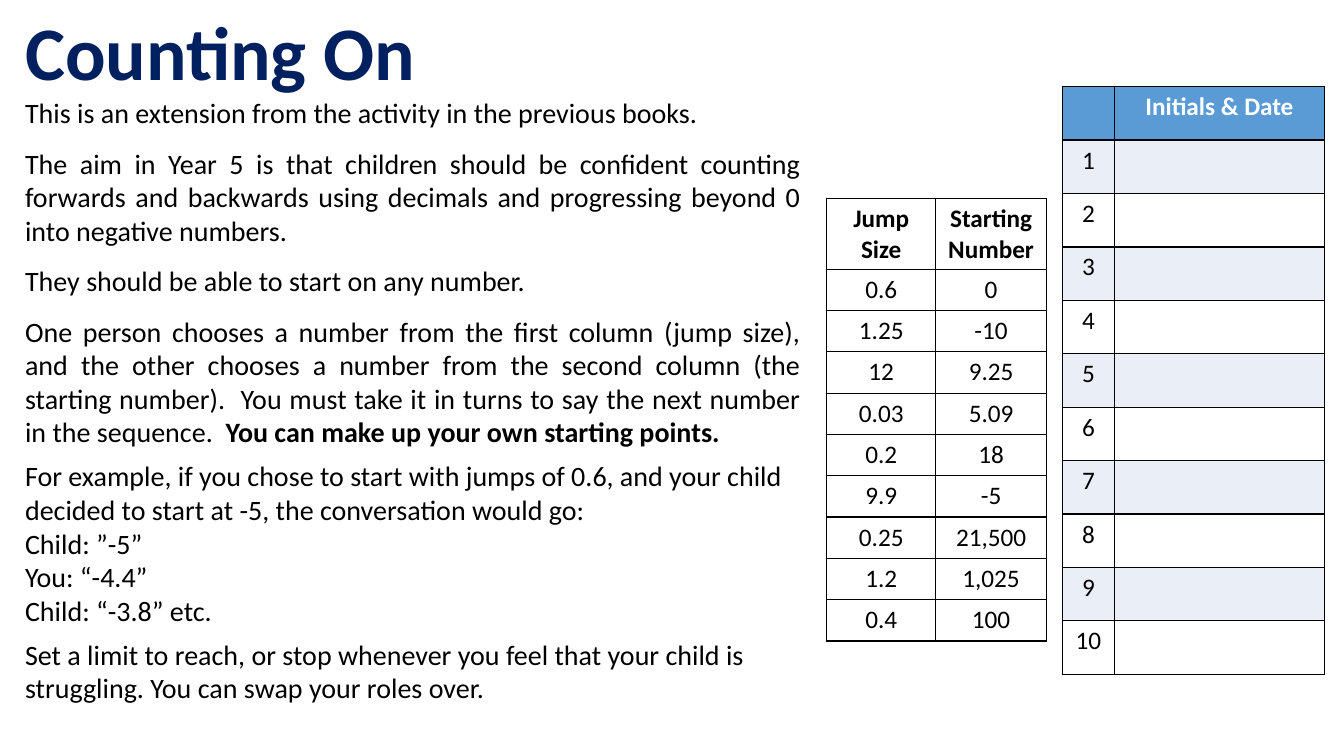
from lxml.etree import SubElement
from pptx import Presentation
from pptx.dml.color import RGBColor
from pptx.enum.text import PP_ALIGN
from pptx.oxml.ns import qn
from pptx.util import Inches, Pt

COLORS = {
    "navy": "002060",
    "black": "000000",
    "white": "FFFFFF",
    "blue": "5B9BD5",
    "pale": "EAEFF7",
}
LEFT, JUST, MID = PP_ALIGN.LEFT, PP_ALIGN.JUSTIFY, PP_ALIGN.CENTER


class Page:
    font = "Calibri"

    def __init__(self, slide):
        self.slide = slide

    def color(self, name):
        return RGBColor.from_string(COLORS[name])

    def run(self, para, text, size, color="black", bold=False):
        run = para.add_run()
        run.text = text
        run.font.name = self.font
        run.font.size = Pt(size)
        run.font.bold = bold
        run.font.color.rgb = self.color(color)

    def text(self, box, paras, size, color="black"):
        frame = self.slide.shapes.add_textbox(*map(Inches, box)).text_frame
        frame.word_wrap = True
        for i, (align, gap, runs) in enumerate(paras):
            para = frame.add_paragraph() if i else frame.paragraphs[0]
            para.alignment = align
            if gap:
                para.space_before = Pt(gap)
            for words, bold in runs:
                self.run(para, words, size, color, bold)

    def border(self, cell):
        props = cell._tc.get_or_add_tcPr()
        for i, side in enumerate(("lnL", "lnR", "lnT", "lnB")):
            line = SubElement(props, qn("a:" + side), w=str(Pt(1)))
            fill = SubElement(line, qn("a:solidFill"))
            SubElement(fill, qn("a:srgbClr"), val=COLORS["black"])
            props.insert(i, line)

    def table(self, left, top, cols, head, row, data, ink, fills):
        size = sum(cols), head + row * (len(data) - 1)
        table = self.slide.shapes.add_table(
            len(data), len(cols), *map(Inches, (left, top, *size))).table
        table.horz_banding = False
        for col, width in zip(table.columns, cols):
            col.width = Inches(width)
        for r, values in enumerate(data):
            table.rows[r].height = Inches(row if r else head)
            for c, value in enumerate(values):
                cell = table.cell(r, c)
                cell.fill.solid()
                tone = fills[1 + (r - 1) % 2] if r else fills[0]
                cell.fill.fore_color.rgb = self.color(tone)
                self.border(cell)
                para = cell.text_frame.paragraphs[0]
                para.alignment = MID
                if value:
                    self.run(para, value, 18, "black" if r else ink, r == 0)


def main():
    deck = Presentation()
    deck.slide_width, deck.slide_height = Inches(13.33), Inches(7.5)
    page = Page(deck.slides.add_slide(deck.slide_layouts[6]))

    page.text((0.15, 0, 6.34, 1.01),
              [(LEFT, 0, [("Counting On", True)])], 54, "navy")
    page.text((0.15, 0.9, 7.89, 6.19), [
        (JUST, 0, [("This is an extension from the activity in the previous "
                    "books.", False)]),
        (JUST, 12, [("The aim in Year 5 is that children should be confident "
                     "counting forwards and backwards using decimals and "
                     "progressing beyond 0 into negative numbers.", False)]),
        (JUST, 12, [("They should be able to start on any number.", False)]),
        (JUST, 12, [("One person chooses a number from the first column (jump "
                     "size), and the other chooses a number from the second "
                     "column (the starting number).  You must take it in turns "
                     "to say the next number in the sequence.  ", False),
                    ("You can make up your own starting points.", True)]),
        (LEFT, 7.3, [("For example, if you chose to start with jumps of 0.6, "
                      "and your child decided to start at -5, the conversation "
                      "would go:", False)]),
        (LEFT, 0, [("Child: ”-5”", False)]),
        (LEFT, 0, [("You: “-4.4”", False)]),
        (LEFT, 0, [("Child: “-3.8” etc.", False)]),
        (LEFT, 7.3, [("Set a limit to reach, or stop whenever you feel that "
                      "your child is struggling. You can swap your roles over.",
                      False)]),
    ], 20)

    jumps = [
        ("Jump Size", "Starting Number"),
        ("0.6", "0"), ("1.25", "-10"), ("12", "9.25"),
        ("0.03", "5.09"), ("0.2", "18"), ("9.9", "-5"),
        ("0.25", "21,500"), ("1.2", "1,025"), ("0.4", "100"),
    ]
    page.table(8.2, 1.97, (1.08, 1.1), 0.7, 0.41, jumps, "black",
               ("white", "white", "white"))
    log = [("", "Initials & Date")] + [(str(n), "") for n in range(1, 11)]
    page.table(10.54, 0.86, (0.51, 2.09), 0.53, 0.53, log, "white",
               ("blue", "pale", "white"))
    deck.save("out.pptx")


if __name__ == "__main__":
    main()
